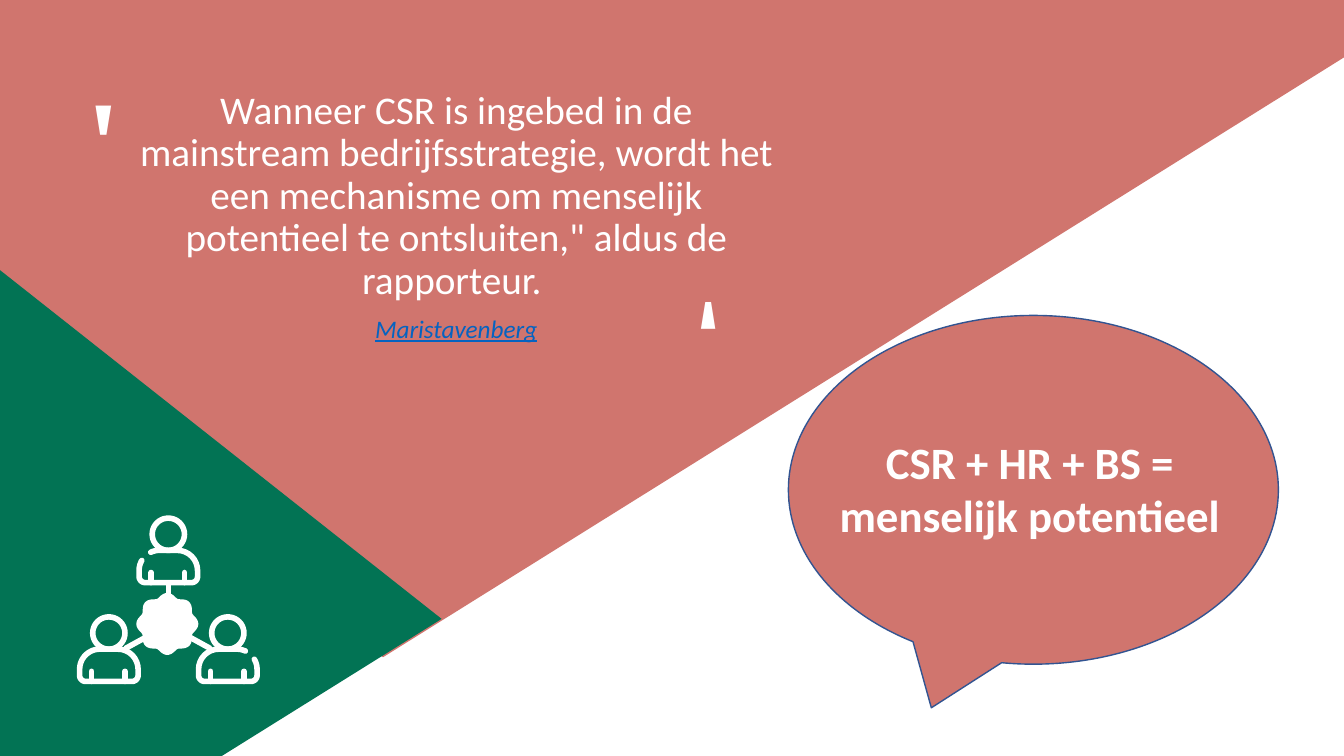
from math import cos, radians, sin

from lxml.etree import SubElement
from pptx import Presentation
from pptx.dml.color import RGBColor
from pptx.enum.shapes import MSO_SHAPE
from pptx.enum.text import MSO_ANCHOR, PP_ALIGN
from pptx.oxml.ns import qn
from pptx.util import Inches, Pt

COLORS = {
    "red": "D0756E",
    "green": "027354",
    "white": "FFFFFF",
    "outline": "325491",
    "source": "0563C1",
}
ICON_STROKE = 4


def color(name):
    """Return the named colour."""
    return RGBColor.from_string(COLORS[name])


def style_shape(shape, fill=None, line=None, width=1):
    """Set fill and line, leaving out whatever is not named."""
    shape.shadow.inherit = False
    if fill:
        shape.fill.solid()
        shape.fill.fore_color.rgb = color(fill)
    else:
        shape.fill.background()
    if line:
        shape.line.color.rgb = color(line)
        shape.line.width = Pt(width)
    else:
        shape.line.fill.background()


def add_outline(slide, contours, fill=None, line=None):
    """Draw contours, each a list of points in inches and a closed flag."""
    builder = None
    for points, close in contours:
        corners = [(Inches(x), Inches(y)) for x, y in points]
        if builder is None:
            builder = slide.shapes.build_freeform(*corners[0])
        else:
            builder.move_to(*corners[0])
        builder.add_line_segments(corners[1:], close=close)
    shape = builder.convert_to_shape()
    style_shape(shape, fill, line, ICON_STROKE)
    if line:
        stroke = shape.line._get_or_add_ln()
        stroke.set("cap", "rnd")
        SubElement(stroke, qn("a:round"))


def add_preset(slide, preset, box, fill=None, line=None):
    """Add a styled preset shape."""
    shape = slide.shapes.add_shape(preset, *map(Inches, box))
    style_shape(shape, fill, line)


def add_text_box(slide, box, anchor=MSO_ANCHOR.TOP):
    """Add a wrapping text box and return its shape."""
    shape = slide.shapes.add_textbox(*map(Inches, box))
    shape.text_frame.word_wrap = True
    shape.text_frame.vertical_anchor = anchor
    return shape


def add_text(paragraph, text, size, align, spacing=1.0, before=0,
             font="Calibri", fill="white", bold=False, italic=False,
             underline=False):
    """Fill a paragraph with one formatted run."""
    paragraph.alignment = align
    paragraph.line_spacing = spacing
    paragraph.space_before = Pt(before)
    run = paragraph.add_run()
    run.text = text
    run.font.name = font
    run.font.size = Pt(size)
    run.font.bold = bold
    run.font.italic = italic
    run.font.underline = underline
    run.font.color.rgb = color(fill)


def add_quote_mark(slide, box, size, align, spacing, rotation=0):
    """Add one large quotation mark."""
    shape = add_text_box(slide, box)
    shape.rotation = rotation
    add_text(shape.text_frame.paragraphs[0], "'", size, align, spacing, 10,
             font="Times New Roman", bold=True)


def arc(center_x, center_y, radius, start, end, steps=8):
    """Return points along an arc, with angles in degrees."""
    angles = [radians(start + (end - start) * i / steps) for i in range(steps + 1)]
    return [(center_x + radius * cos(a), center_y + radius * sin(a)) for a in angles]


def person_contours(x, y, gap_side=0):
    """Return head, shoulders and arms, with a gap in one shoulder if asked."""
    body = (arc(-0.09, 0.36, 0.2, 245, 270) + arc(0.09, 0.36, 0.2, 270, 360)
            + arc(0.23, 0.42, 0.06, 0, 90) + arc(-0.23, 0.42, 0.06, 90, 180)
            + arc(-0.09, 0.36, 0.2, 180, 210 if gap_side else 245))
    mirror = -1 if gap_side > 0 else 1
    contours = [(arc(x, y, 0.16, 0, 360, 40), True),
                ([(x + mirror * dx, y + dy) for dx, dy in body], not gap_side)]
    for arm in (x - 0.17, x + 0.16):
        contours.append(([(arm, y + 0.38), (arm, y + 0.48)], False))
    return contours


def add_team_icon(slide):
    """Draw three people linked to a gear."""
    center_x, center_y = 1.66, 6.19
    gear = []
    for angle in range(0, 360, 4):
        radius = 0.26 + 0.02 * cos(radians(8 * angle))
        gear += arc(center_x, center_y, radius, angle, angle, 1)[:1]
    links = [([(1.67, 5.79), (1.67, 5.95)], False),
             ([(1.25, 6.43), (1.45, 6.32)], False),
             ([(2.08, 6.43), (1.88, 6.32)], False)]
    add_outline(slide, [(gear, True)], fill="white", line="white")
    add_outline(slide, links + person_contours(1.67, 5.3, -1)
                + person_contours(1.08, 6.28) + person_contours(2.26, 6.28, 1),
                line="white")
    add_preset(slide, MSO_SHAPE.DONUT, (1.54, 6.09, 0.25, 0.23), fill="white")


def add_quote(slide):
    """Add the quotation, its source and its marks."""
    add_quote_mark(slide, (6.77, 2.18, 0.86, 1.16), 81.6, PP_ALIGN.RIGHT, 0.7, 180)
    frame = add_text_box(slide, (1.23, 0, 6.59, 4.31), MSO_ANCHOR.MIDDLE).text_frame
    add_text(frame.paragraphs[0],
             "Wanneer CSR is ingebed in de mainstream bedrijfsstrategie, "
             "wordt het een mechanisme om menselijk potentieel te ontsluiten,\" "
             "aldus de rapporteur. ", 28, PP_ALIGN.CENTER, 0.9, 10)
    add_text(frame.add_paragraph(), "Maristavenberg", 18, PP_ALIGN.CENTER, 0.9, 10,
             fill="source", italic=True, underline=True)
    add_quote_mark(slide, (0.76, 0.86, 2.86, 1.34), 88.8, PP_ALIGN.LEFT, 0.8)


def main():
    """Build and save the slide."""
    presentation = Presentation()
    presentation.slide_width = Inches(13.33)
    presentation.slide_height = Inches(7.5)
    slide = presentation.slides.add_slide(presentation.slide_layouts[6])
    red_field = [(0, 0), (13.33, 0), (13.33, 0.57), (3.8, 6.52), (0, 4.04)]
    green_field = [(0, 2.68), (4.38, 6.14), (2.2, 7.5), (0, 7.5)]
    add_outline(slide, [(red_field, True)], fill="red")
    add_outline(slide, [(green_field, True)], fill="green")
    add_preset(slide, MSO_SHAPE.OVAL_CALLOUT, (7.82, 3.13, 4.86, 3.46),
               fill="red", line="outline")
    add_quote(slide)
    add_team_icon(slide)
    formula = add_text_box(slide, (8.01, 4.26, 4.41, 1.18))
    add_text(formula.text_frame.paragraphs[0], "CSR + HR + BS = menselijk potentieel",
             32, PP_ALIGN.CENTER, bold=True)
    presentation.save("out.pptx")


if __name__ == "__main__":
    main()
